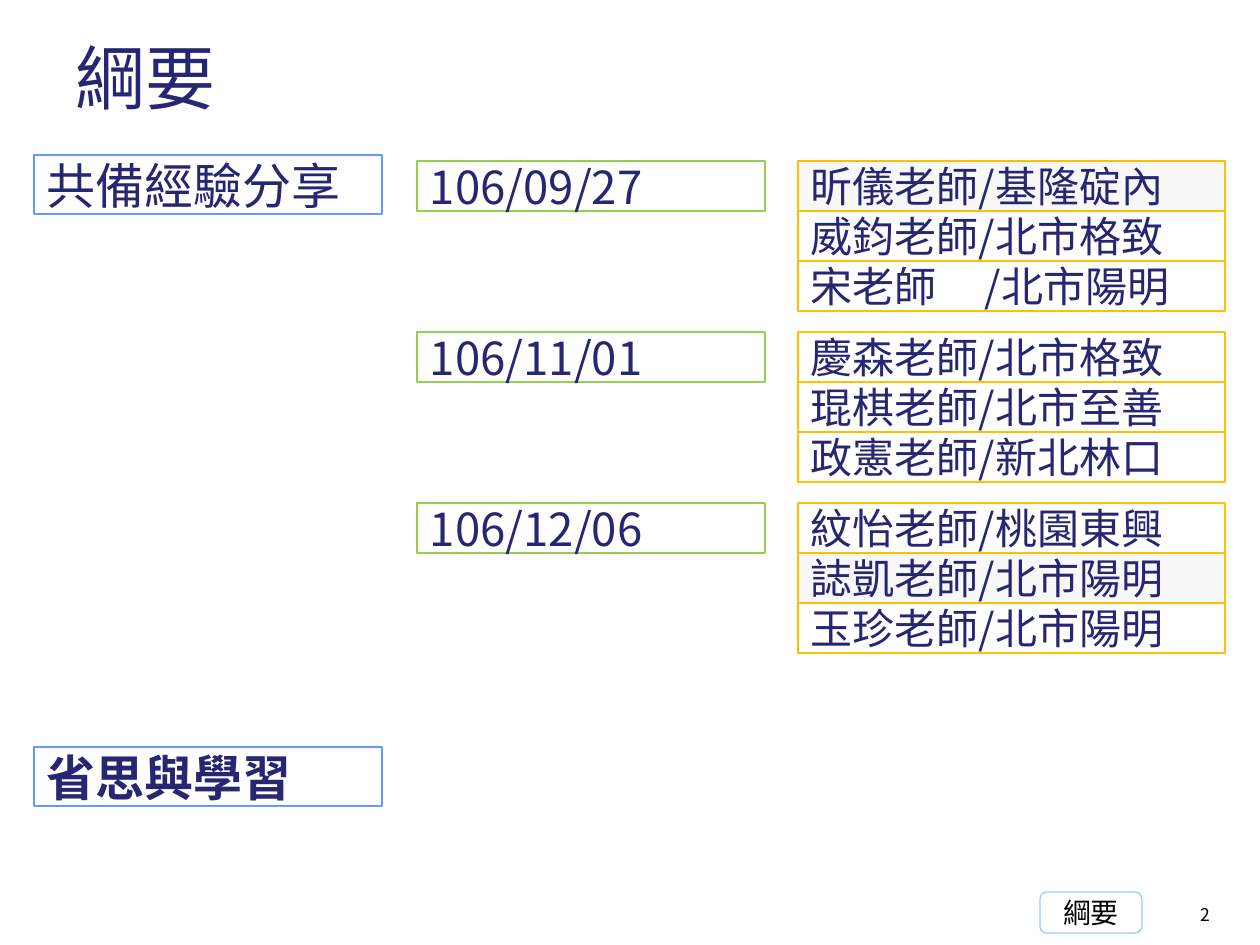
from dataclasses import dataclass

from lxml import etree
from pptx import Presentation
from pptx.dml.color import RGBColor
from pptx.enum.shapes import MSO_SHAPE
from pptx.enum.text import MSO_ANCHOR, PP_ALIGN
from pptx.oxml.ns import qn
from pptx.util import Emu, Pt

RECT, ROUND = MSO_SHAPE.RECTANGLE, MSO_SHAPE.ROUNDED_RECTANGLE
MIDDLE = MSO_ANCHOR.MIDDLE
LEFT, CENTER, RIGHT = PP_ALIGN.LEFT, PP_ALIGN.CENTER, PP_ALIGN.RIGHT
SCALE = 914400 / 126


@dataclass(frozen=True)
class Theme:
    cjk: str = "Noto Sans CJK SC"
    latin: str = "Arial"
    navy: str = "262673"
    black: str = "000000"
    white: str = "FFFFFF"
    gray: str = "F8F8F8"
    blue: str = "6699FF"
    green: str = "92D050"
    gold: str = "FFC000"
    sky: str = "99CCFF"
    title: int = 40
    topic: int = 28
    date: int = 26
    name: int = 24
    tag: int = 16
    page: int = 10


THEME = Theme()


@dataclass(frozen=True)
class Area:
    left: int
    top: int
    width: int
    height: int


@dataclass(frozen=True)
class Label:
    text: str
    size: int
    color: str = THEME.navy
    font: str = THEME.cjk
    align: PP_ALIGN = LEFT
    bold: bool = False
    wrap: bool = True
    tab: int = 0


@dataclass(frozen=True)
class Talk:
    text: str
    fill: str = THEME.white
    tab: int = 0


@dataclass(frozen=True)
class Session:
    date: str
    talks: tuple[Talk, ...]


SESSIONS = (
    Session("106/09/27", (
        Talk("昕儀老師/基隆碇內", THEME.gray),
        Talk("威鈞老師/北市格致"),
        Talk("宋老師\t/北市陽明", tab=174),
    )),
    Session("106/11/01", (
        Talk("慶森老師/北市格致"),
        Talk("琨棋老師/北市至善"),
        Talk("政憲老師/新北林口"),
    )),
    Session("106/12/06", (
        Talk("紋怡老師/桃園東興"),
        Talk("誌凱老師/北市陽明", THEME.gray),
        Talk("玉珍老師/北市陽明"),
    )),
)
TOPICS = (("共備經驗分享", 155, False), ("省思與學習", 747, True))
TOPIC_X, DATE_X, TALK_X = 34, 417, 798
SIDE_W, TALK_W = 348, 427
TOPIC_H, ROW_H = 59, 50
FIRST_Y, STEP_Y = 161, 171


def px(value: int) -> Emu:
    return Emu(round(value * SCALE))


def place(area: Area) -> tuple[Emu, Emu, Emu, Emu]:
    return px(area.left), px(area.top), px(area.width), px(area.height)


def write(shape, label: Label) -> None:
    frame = shape.text_frame
    frame.word_wrap = label.wrap
    frame.vertical_anchor = MIDDLE
    frame.margin_left = frame.margin_right = px(13)
    frame.margin_top = frame.margin_bottom = px(6)
    para = frame.paragraphs[0]
    para.alignment = label.align
    if label.tab:
        stops = etree.SubElement(para._p.get_or_add_pPr(), qn("a:tabLst"))
        etree.SubElement(stops, qn("a:tab"), pos=str(px(label.tab)), algn="l")
    run = para.add_run()
    run.text = label.text
    font = run.font
    font.name, font.size, font.bold = label.font, Pt(label.size), label.bold
    font.color.rgb = RGBColor.from_string(label.color)
    # East Asian glyphs take their own typeface
    etree.SubElement(run._r.get_or_add_rPr(), qn("a:ea"), typeface=label.font)


def draw_text(slide, area: Area, label: Label) -> None:
    write(slide.shapes.add_textbox(*place(area)), label)


def draw_box(slide, area: Area, label: Label, line: str,
             fill: str = THEME.white, kind: MSO_SHAPE = RECT) -> None:
    box = slide.shapes.add_shape(kind, *place(area))
    box.shadow.inherit = False
    box.fill.solid()
    box.fill.fore_color.rgb = RGBColor.from_string(fill)
    box.line.color.rgb = RGBColor.from_string(line)
    box.line.width = Pt(0.75)
    write(box, label)


def draw_session(slide, top: int, session: Session) -> None:
    draw_box(slide, Area(DATE_X, top, SIDE_W, ROW_H),
             Label(session.date, THEME.date), THEME.green)
    for row, talk in enumerate(session.talks):
        draw_box(slide, Area(TALK_X, top + row * ROW_H, TALK_W, ROW_H),
                 Label(talk.text, THEME.name, tab=talk.tab),
                 THEME.gold, talk.fill)


def main() -> None:
    deck = Presentation()
    deck.slide_width, deck.slide_height = px(1260), px(945)
    slide = deck.slides.add_slide(deck.slide_layouts[6])
    draw_text(slide, Area(63, 38, 1134, 78), Label("綱要", THEME.title))
    for text, top, bold in TOPICS:
        draw_box(slide, Area(TOPIC_X, top, SIDE_W, TOPIC_H),
                 Label(text, THEME.topic, bold=bold), THEME.blue)
    for index, session in enumerate(SESSIONS):
        draw_session(slide, FIRST_Y + index * STEP_Y, session)
    draw_box(slide, Area(1040, 892, 102, 41),
             Label("綱要", THEME.tag, THEME.black, THEME.latin, CENTER,
                   wrap=False), THEME.sky, kind=ROUND)
    draw_text(slide, Area(1144, 893, 79, 43),
              Label("2", THEME.page, THEME.black, align=RIGHT))
    deck.save("out.pptx")


if __name__ == "__main__":
    main()
